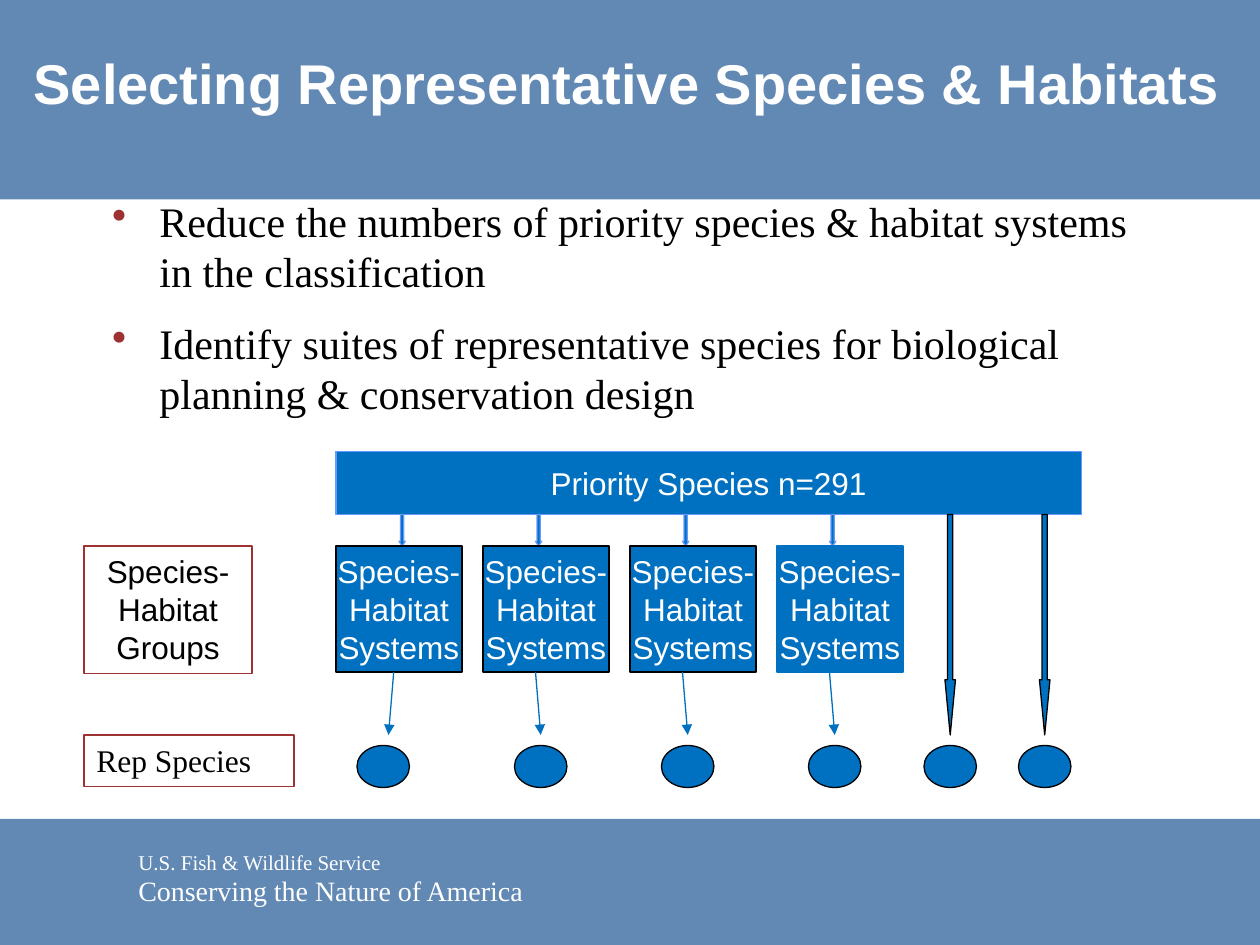
from lxml import etree
from pptx import Presentation
from pptx.dml.color import RGBColor
from pptx.enum.shapes import MSO_CONNECTOR, MSO_SHAPE
from pptx.enum.text import MSO_ANCHOR, MSO_AUTO_SIZE, PP_ALIGN
from pptx.oxml.ns import qn
from pptx.util import Pt

RECT, OVAL, DOWN = MSO_SHAPE.RECTANGLE, MSO_SHAPE.OVAL, MSO_SHAPE.DOWN_ARROW
STRAIGHT = MSO_CONNECTOR.STRAIGHT
TOP, MIDDLE = MSO_ANCHOR.TOP, MSO_ANCHOR.MIDDLE
LEFT, CENTER = PP_ALIGN.LEFT, PP_ALIGN.CENTER
NO_FIT = MSO_AUTO_SIZE.NONE
SANS, SERIF = "Arial", "Times New Roman"
BAND, BLUE, PALE, RED = "6289B4", "0070C0", "6699FF", "9D3232"
BLACK, WHITE = "000000", "FFFFFF"


def rgb(color):
    return RGBColor.from_string(color)


class Deck:
    """Holds the style and the current slide."""

    def __init__(self, width, height):
        self.prs = Presentation()
        self.prs.slide_width, self.prs.slide_height = Pt(width), Pt(height)
        self.line_width = Pt(0.75)
        self.s = None

    def title_slide(self):
        self.s = self.prs.slides.add_slide(self.prs.slide_layouts[5])

    def set_text(self, sp, text, size=18, font=SANS, color=WHITE, align=LEFT,
                 anchor=TOP, wrap=True, bold=False):
        tf = sp.text_frame
        tf.text = text
        tf.word_wrap, tf.auto_size, tf.vertical_anchor = wrap, NO_FIT, anchor
        for p in tf.paragraphs:
            p.alignment = align
            for r in p.runs:
                r.font.size, r.font.name, r.font.bold = Pt(size), font, bold
                r.font.color.rgb = rgb(color)
        return tf

    def title(self, text, x, y, w, h, **style):
        """Fill the title and bring it in front of the header band."""
        sp = self.s.shapes.title
        sp.left, sp.top, sp.width, sp.height = Pt(x), Pt(y), Pt(w), Pt(h)
        self.set_text(sp, text, **style)
        sp._element.getparent().append(sp._element)

    def text(self, text, x, y, w, h, **style):
        sp = self.s.shapes.add_textbox(Pt(x), Pt(y), Pt(w), Pt(h))
        return self.set_text(sp, text, **style)

    def bullets(self, items, x, y, w, h, gap, indent, **style):
        tf = self.text("\n".join(items), x, y, w, h, **style)
        for p in tf.paragraphs:
            pPr = p._p.get_or_add_pPr()
            pPr.set("marL", str(Pt(indent)))
            pPr.set("indent", str(-Pt(indent)))
            clr = etree.SubElement(pPr, qn("a:buClr"))
            etree.SubElement(clr, qn("a:srgbClr"), val=RED)
            etree.SubElement(pPr, qn("a:buChar"), char="•")
        for p in tf.paragraphs[:-1]:
            p.space_after = Pt(gap)

    def shape(self, kind, x, y, w, h, fill=BLUE, line=BLACK):
        sp = self.s.shapes.add_shape(kind, Pt(x), Pt(y), Pt(w), Pt(h))
        sp.shadow.inherit = False
        if fill:
            sp.fill.solid()
            sp.fill.fore_color.rgb = rgb(fill)
        else:
            sp.fill.background()
        if line:
            sp.line.color.rgb = rgb(line)
            sp.line.width = self.line_width
        else:
            sp.line.fill.background()
        return sp

    def box(self, text, x, y, w, h, fill=BLUE, line=BLACK, **style):
        self.set_text(self.shape(RECT, x, y, w, h, fill, line), text, **style)

    def block_arrow(self, x, y, w, h, head, line=BLACK):
        """Down arrow whose head length is given as a multiple of its width."""
        sp = self.shape(DOWN, x, y, w, h, line=line)
        sp.adjustments[0], sp.adjustments[1] = 0.5, head

    def arrow(self, x1, y1, x2, y2):
        c = self.s.shapes.add_connector(STRAIGHT, Pt(x1), Pt(y1), Pt(x2), Pt(y2))
        c.line.color.rgb = rgb(BLUE)
        c.line.width = self.line_width
        spPr = c._element.spPr
        etree.SubElement(spPr.get_or_add_ln(), qn("a:tailEnd"), type="triangle")
        etree.SubElement(spPr, qn("a:effectLst"))


def main():
    d = Deck(720, 540)
    d.title_slide()

    d.shape(RECT, 0, 468, 720, 72, BAND, None)
    d.shape(RECT, 0, 0, 720, 114, BAND, None)
    d.text("U.S. Fish & Wildlife Service", 72, 482, 246, 22, size=12, font=SERIF)
    d.text("Conserving the Nature of America", 72, 495.5, 246, 27, size=16, font=SERIF)
    d.title("Selecting Representative Species & Habitats", 12, 24, 708, 46,
            size=32, bold=True)
    d.bullets(["Reduce the numbers of priority species & habitat systems "
               "in the classification",
               "Identify suites of representative species for biological "
               "planning & conservation design"],
              57, 108, 606, 135, gap=12, indent=27,
              size=24, font=SERIF, color=BLACK)

    bar_bottom, box_top, box_size, species_top = 294, 312, 72, 426
    centered = dict(align=CENTER, anchor=MIDDLE, wrap=False)
    d.box("Priority Species n=291", 192, 258, 426, 36, line=PALE, **centered)
    d.box("Species-Habitat Groups", 48, box_top, 96, 73, None, RED,
          color=BLACK, align=CENTER)
    d.box("Rep Species", 48, 420, 120, 29.5, None, RED, font=SERIF, color=BLACK)

    # Per system: block arrow left, link start and end, species left, box line
    systems = [(228, 225, 222, 204, BLACK), (306, 306, 309, 294, BLACK),
               (390, 390, 393, 378, BLACK), (474, 474, 477, 462, BLUE)]
    for i, (arrow_x, start_x, end_x, species_x, line) in enumerate(systems):
        d.block_arrow(arrow_x, bar_bottom, 3.6, 18, 0.75, PALE)
        d.box("Species-\nHabitat\nSystems", 192 + 84 * i, box_top,
              box_size, box_size, line=line, **centered)
        d.arrow(start_x, box_top + box_size, end_x, 420)
        d.shape(OVAL, species_x, species_top, 30, 24)

    for x in (540, 594):
        d.block_arrow(x, bar_bottom, 6, 126, 5.25)
        d.shape(OVAL, x - 12, species_top, 30, 24)

    d.prs.save("out.pptx")


if __name__ == "__main__":
    main()
